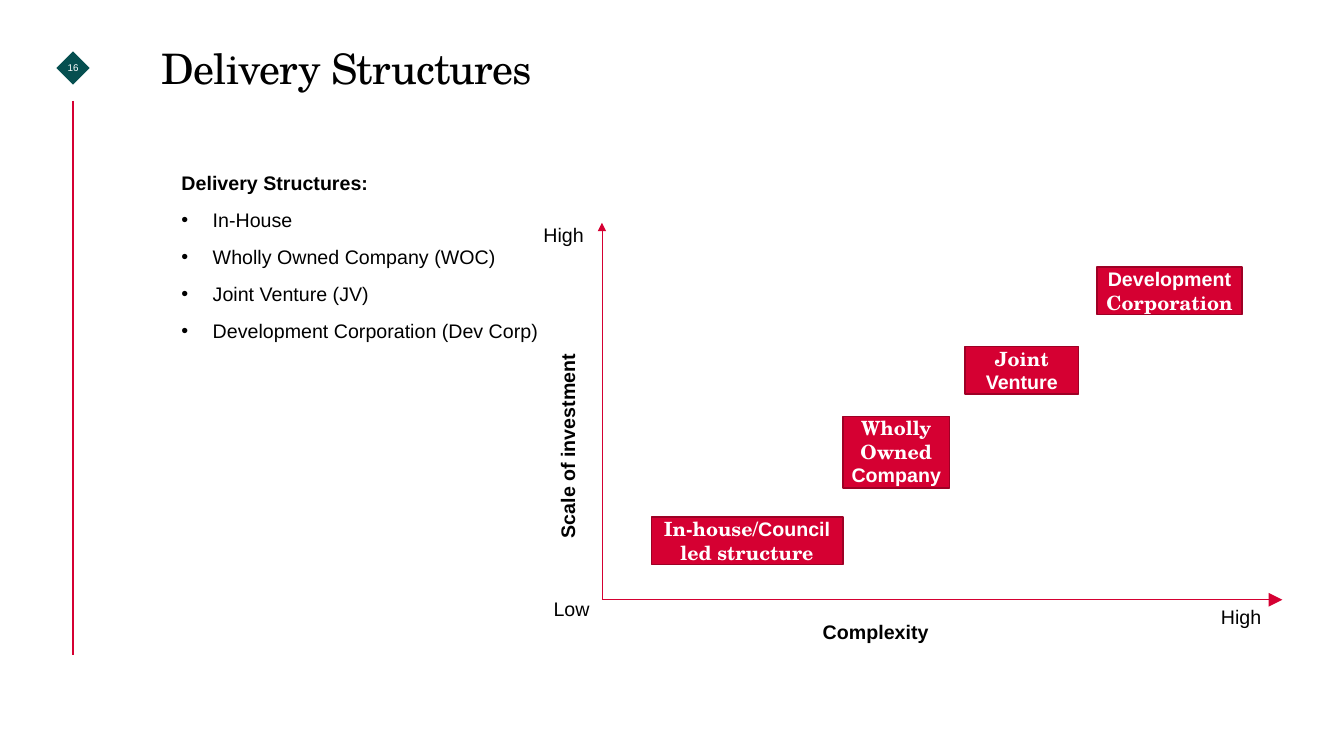
import pptx
import pptx.util
import pptx.dml.color
import pptx.enum.shapes
import pptx.enum.text
import pptx.oxml
import pptx.oxml.ns
from lxml import etree

Inches, Pt = pptx.util.Inches, pptx.util.Pt
RGB = pptx.dml.color.RGBColor.from_string
SHAPE = pptx.enum.shapes.MSO_SHAPE
STRAIGHT = pptx.enum.shapes.MSO_CONNECTOR.STRAIGHT
ALIGN = pptx.enum.text.PP_ALIGN
ANCHOR = pptx.enum.text.MSO_ANCHOR
qn = pptx.oxml.ns.qn


class Theme:
    red, dark_red, teal = RGB("D50032"), RGB("9E0025"), RGB("064F50")
    black, white = RGB("000000"), RGB("FFFFFF")
    serif, sans = "TeX Gyre Schola", "Arial"
    title_size, text_size, number_size = Pt(30), Pt(14), Pt(7)


def prepare_frame(shape, anchor=ANCHOR.TOP):
    """Remove margins and autofit, turn wrapping on, and return the text frame."""
    frame = shape.text_frame
    frame.margin_left = frame.margin_right = frame.margin_top = frame.margin_bottom = 0
    frame.word_wrap = True
    frame.auto_size = pptx.enum.text.MSO_AUTO_SIZE.NONE
    frame.vertical_anchor = anchor
    return frame


def add_rule(shapes, start, end, width, arrow_size=None):
    """Draw a red line; arrow_size (sm, med, lg) puts an arrowhead at its end."""
    rule = shapes.add_connector(STRAIGHT, *map(Inches, start + end))
    rule.line.color.rgb = Theme.red
    rule.line.width = Pt(width)
    properties = rule._element.spPr
    if arrow_size:
        etree.SubElement(properties.find(qn("a:ln")), qn("a:tailEnd"),
                         type="triangle", w=arrow_size, len=arrow_size)
    etree.SubElement(properties, qn("a:effectLst"))


deck = pptx.Presentation()
deck.slide_width, deck.slide_height = Inches(13.33), Inches(7.5)
slide = deck.slides.add_slide(deck.slide_layouts[1])

# Side rule and page number
add_rule(slide.shapes, (0.72, 1), (0.72, 6.5), 1.5)
page_marker = slide.shapes.add_shape(
    SHAPE.DIAMOND, Inches(0.56), Inches(0.51), Inches(0.33), Inches(0.33))
page_marker.shadow.inherit = False
page_marker.fill.solid()
page_marker.fill.fore_color.rgb = Theme.teal
page_marker.line.fill.background()
page_number = prepare_frame(page_marker, ANCHOR.MIDDLE).paragraphs[0]
page_number.text = "16"
page_number.alignment = ALIGN.CENTER
page_number.font.size, page_number.font.name = Theme.number_size, Theme.sans
page_number.font.color.rgb = Theme.white

# Title
title = slide.shapes.title
title.left, title.top, title.width, title.height = map(Inches, (1.6, 0.48, 8.94, 0.93))
heading = prepare_frame(title).paragraphs[0]
heading.text = "Delivery Structures"
heading.alignment = ALIGN.LEFT
heading.line_spacing = 0.9
heading.font.size, heading.font.name = Theme.title_size, Theme.serif
heading.font.color.rgb = Theme.black
heading.runs[0]._r.get_or_add_rPr().set("spc", "-50")

# List of structures
structures = slide.placeholders[1]
structures.left, structures.top, structures.width, structures.height = map(
    Inches, (1.8, 1.67, 9.73, 4.57))
structures_frame = prepare_frame(structures)
structures_frame.text = "\n".join([
    "Delivery Structures:",
    "In-House",
    "Wholly Owned Company (WOC)",
    "Joint Venture (JV)",
    "Development Corporation (Dev Corp)",
])
for position, item in enumerate(structures_frame.paragraphs):
    is_lead = position == 0
    item.line_spacing, item.space_before, item.space_after = 1.1, Pt(0), Pt(8)
    item.font.size, item.font.name, item.font.bold = Theme.text_size, Theme.sans, is_lead
    item.font.color.rgb = Theme.black
    indent = 0 if is_lead else Inches(0.31)
    layout = item._p.get_or_add_pPr()
    layout.set("marL", str(indent))
    layout.set("indent", str(-indent))
    bullet = pptx.oxml.parse_xml(
        f'<a:{"buNone" if is_lead else "buChar"} {pptx.oxml.ns.nsdecls("a")}/>')
    if not is_lead:
        bullet.set("char", "•")
    layout.insert_element_before(bullet, "a:tabLst", "a:defRPr", "a:extLst")

# Axes of the investment and complexity diagram
diagram = slide.shapes.add_group_shape().shapes
origin = (5.97, 5.95)
add_rule(diagram, origin, (5.97, 2.21), 0.5, "med")
add_rule(diagram, origin, (12.72, 5.95), 0.5, "lg")

# Axis labels: text, left, top, width, rotation, bold
axis_labels = [
    ("Scale of investment", 4.2, 3.79, 2.86, 270, True),
    ("Complexity", 8.16, 6.15, 5.45, 0, True),
    ("Low", 5.49, 5.92, 0.58, 0, False),
    ("High", 12.11, 6, 0.72, 0, False),
    ("High", 5.39, 2.21, 0.58, 0, False),
]
for text, left, top, width, rotation, bold in axis_labels:
    label_box = diagram.add_textbox(*map(Inches, (left, top, width, 0.24)))
    label_box.rotation = rotation
    label = prepare_frame(label_box).paragraphs[0]
    label.text = text
    label.font.size, label.font.name, label.font.bold = Theme.text_size, Theme.sans, bold
    label.font.color.rgb = Theme.black

# Structures on the diagram: left, top, width, height, (text, typeface) parts
options = [
    (6.46, 5.13, 1.9, 0.47, [("In-house/", Theme.serif), ("Council", Theme.sans),
                             (" led structure", Theme.serif)]),
    (8.36, 4.13, 1.06, 0.71, [("Wholly Owned ", Theme.serif), ("Company", Theme.sans)]),
    (9.57, 3.44, 1.13, 0.47, [("Joint ", Theme.serif), ("Venture", Theme.sans)]),
    (10.88, 2.65, 1.44, 0.47, [("Development", Theme.sans), (" Corporation", Theme.serif)]),
]
for left, top, width, height, parts in options:
    option = diagram.add_shape(SHAPE.RECTANGLE, *map(Inches, (left, top, width, height)))
    option.shadow.inherit = False
    option.fill.solid()
    option.fill.fore_color.rgb = Theme.red
    option.line.color.rgb = Theme.dark_red
    option.line.width = Pt(1)
    caption = prepare_frame(option).paragraphs[0]
    caption.alignment = ALIGN.CENTER
    caption.font.size, caption.font.bold = Theme.text_size, True
    caption.font.color.rgb = Theme.white
    for text, typeface in parts:
        run = caption.add_run()
        run.text = text
        run.font.name = typeface

deck.save("out.pptx")
